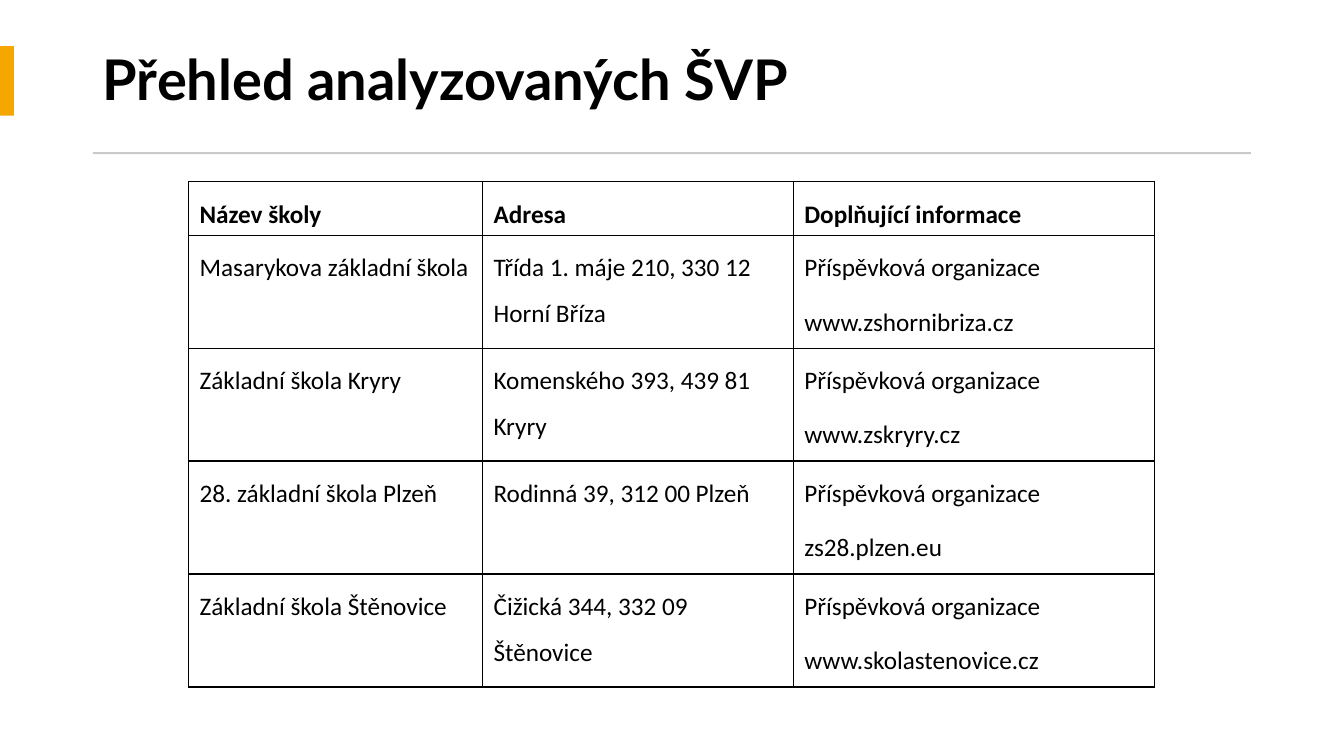
from lxml import etree
from pptx import Presentation
from pptx.dml.color import RGBColor
from pptx.enum.shapes import MSO_SHAPE
from pptx.enum.text import MSO_ANCHOR, PP_ALIGN
from pptx.oxml.ns import qn
from pptx.util import Pt

RECTANGLE = MSO_SHAPE.RECTANGLE
MIDDLE = MSO_ANCHOR.MIDDLE
LEFT, JUSTIFY = PP_ALIGN.LEFT, PP_ALIGN.JUSTIFY

BLACK = RGBColor(0x00, 0x00, 0x00)
AMBER = RGBColor(0xF5, 0xA7, 0x00)
GREY = RGBColor(0xC9, 0xC9, 0xC9)

# Content
TITLE = "Přehled analyzovaných ŠVP"
HEADINGS = ("Název školy", "Adresa", "Doplňující informace")
ORGANIZATION = "Příspěvková organizace"
SCHOOLS = [
    ("Masarykova základní škola", "Třída 1. máje 210, 330 12 Horní Bříza", "www.zshornibriza.cz"),
    ("Základní škola Kryry", "Komenského 393, 439 81 Kryry", "www.zskryry.cz"),
    ("28. základní škola Plzeň", "Rodinná 39, 312 00 Plzeň", "zs28.plzen.eu"),
    ("Základní škola Štěnovice", "Čižická 344, 332 09 Štěnovice", "www.skolastenovice.cz"),
]

# Layout in points
MARGIN, CONTENT_WIDTH = 66.4, 827.2
ACCENT = (0, 33, 10, 49.6)
RULE = (MARGIN, 108.7, CONTENT_WIDTH, 1.4)
TABLE_LEFT, TABLE_TOP = 134.6, 129.8
COLUMN_WIDTHS = (210, 222, 258)
HEADING_HEIGHT, SCHOOL_HEIGHT = 38.2, 80.7


def add_bar(slide, box, color):
    bar = slide.shapes.add_shape(RECTANGLE, *map(Pt, box))
    bar.shadow.inherit = False
    bar.fill.solid()
    bar.fill.fore_color.rgb = color
    bar.line.fill.background()


def format_runs(paragraph, font_name, size, bold):
    for run in paragraph.runs:
        run.font.name = font_name
        run.font.size = Pt(size)
        run.font.bold = bold
        run.font.color.rgb = BLACK


def add_borders(cell):
    properties = cell._tc.get_or_add_tcPr()
    for side in ("lnL", "lnR", "lnT", "lnB"):
        border = etree.SubElement(properties, qn("a:" + side), w=str(Pt(1)))
        fill = etree.SubElement(border, qn("a:solidFill"))
        etree.SubElement(fill, qn("a:srgbClr"), val=str(BLACK))


def fill_cell(cell, text, alignment, bold):
    cell.margin_left = cell.margin_right = Pt(8)
    cell.margin_top, cell.margin_bottom = Pt(1.4), Pt(0)
    add_borders(cell)
    cell.fill.background()
    cell.text_frame.text = text
    for paragraph in cell.text_frame.paragraphs:
        paragraph.alignment = alignment
        paragraph.line_spacing = 1.5
        paragraph.space_after = Pt(6)
        format_runs(paragraph, "Calibri", 18, bold)


def add_school_table(slide):
    rows = [HEADINGS]
    rows += [(name, address, f"{ORGANIZATION}\n{web}") for name, address, web in SCHOOLS]
    heights = [HEADING_HEIGHT] + [SCHOOL_HEIGHT] * len(SCHOOLS)
    table = slide.shapes.add_table(
        len(rows), len(HEADINGS), Pt(TABLE_LEFT), Pt(TABLE_TOP),
        Pt(sum(COLUMN_WIDTHS)), Pt(sum(heights))).table
    table.first_row = table.horz_banding = False
    for column, width in zip(table.columns, COLUMN_WIDTHS):
        column.width = Pt(width)
    for r, (row, height) in enumerate(zip(rows, heights)):
        table.rows[r].height = Pt(height)
        for c, text in enumerate(row):
            is_heading = r == 0
            justified = is_heading or c == len(HEADINGS) - 1
            fill_cell(table.cell(r, c), text, JUSTIFY if justified else LEFT, is_heading)


def main():
    deck = Presentation()
    deck.slide_width, deck.slide_height = Pt(960), Pt(540)
    slide = deck.slides.add_slide(deck.slide_layouts[6])

    # Title
    title = slide.shapes.add_textbox(Pt(MARGIN), Pt(19.4), Pt(CONTENT_WIDTH), Pt(79.2)).text_frame
    title.word_wrap = True
    title.vertical_anchor = MIDDLE
    title.text = TITLE
    title.paragraphs[0].line_spacing = 0.9
    format_runs(title.paragraphs[0], "Lato", 40, True)

    # Accent and rule
    add_bar(slide, ACCENT, AMBER)
    add_bar(slide, RULE, GREY)

    # Schools
    add_school_table(slide)
    deck.save("out.pptx")


if __name__ == "__main__":
    main()
